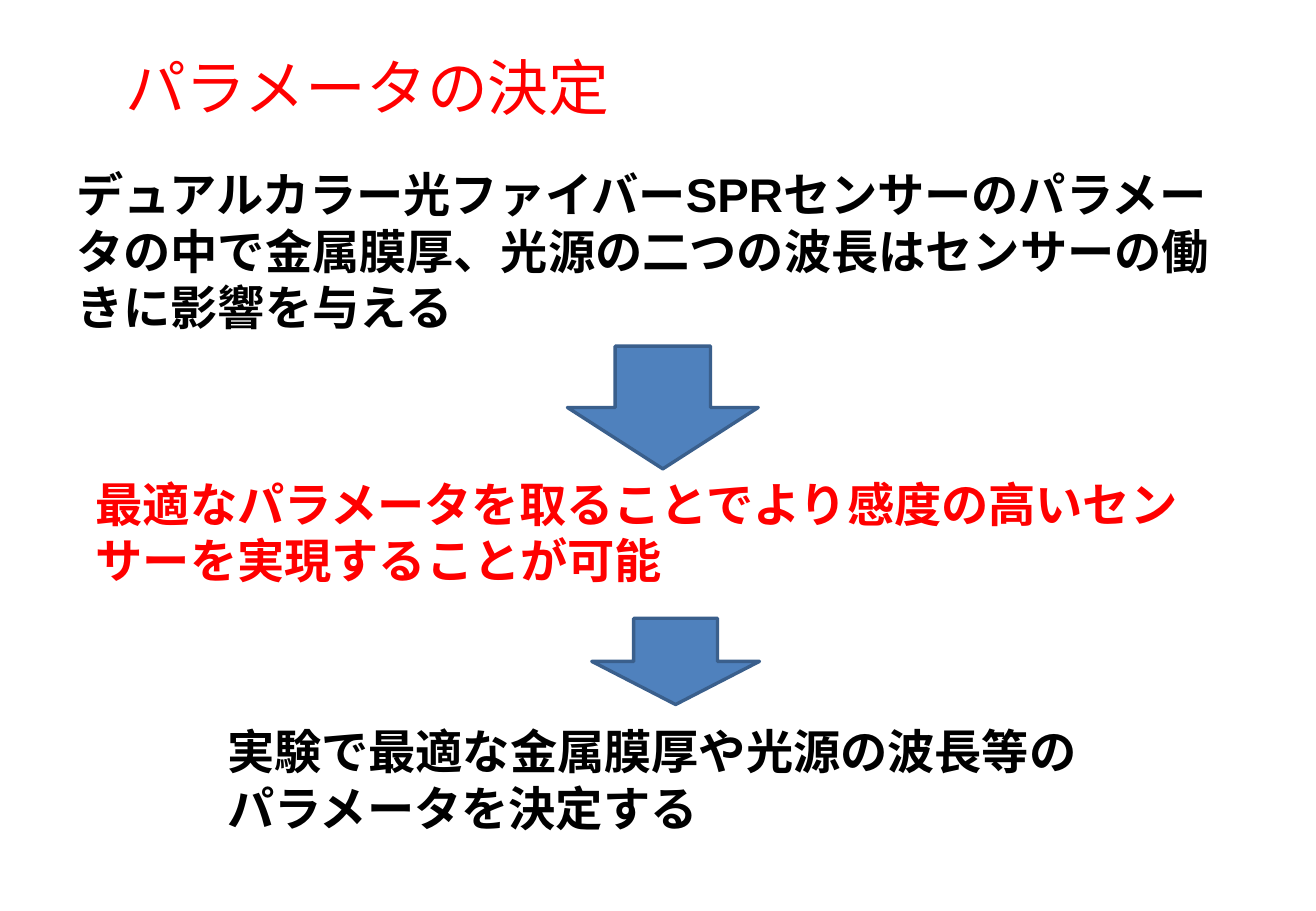
"""Build the slide on choosing the sensor parameters."""
from pptx import Presentation
from pptx.dml.color import RGBColor
from pptx.enum.shapes import MSO_SHAPE
from pptx.enum.text import MSO_ANCHOR, MSO_AUTO_SIZE, PP_ALIGN
from pptx.util import Inches, Pt

COLORS = {"red": "FF0000", "black": "000000", "arrow": "4F81BD", "outline": "3A5F8C"}


def write_text(shape, text, size=28, color="black", bold=True):
    """Fill a shape with one left-aligned paragraph."""
    frame = shape.text_frame
    frame.word_wrap = True
    frame.auto_size = MSO_AUTO_SIZE.NONE
    frame.vertical_anchor = MSO_ANCHOR.TOP
    paragraph = frame.paragraphs[0]
    paragraph.alignment = PP_ALIGN.LEFT
    run = paragraph.add_run()
    run.text = text
    run.font.name = "Arial"
    run.font.size = Pt(size)
    run.font.bold = bold
    run.font.color.rgb = RGBColor.from_string(COLORS[color])


presentation = Presentation()
presentation.slide_width = Inches(10.83)
presentation.slide_height = Inches(7.5)
slide = presentation.slides.add_slide(presentation.slide_layouts[5])

title = slide.shapes.title
title.left, title.top = Inches(0.93), Inches(0.36)
title.width, title.height = Inches(4.25), Inches(0.71)
write_text(title, "パラメータの決定", size=36, color="red", bold=False)

statements = [
    ((0.53, 1.31, 9.84, 1.51), "black",
     "デュアルカラー光ファイバーSPRセンサーのパラメータの中で金属膜厚、光源の二つの波長はセンサーの働きに影響を与える"),
    ((0.69, 3.86, 9.37, 1.04), "red",
     "最適なパラメータを取ることでより感度の高いセンサーを実現することが可能"),
    ((1.77, 5.9, 7.56, 1.04), "black",
     "実験で最適な金属膜厚や光源の波長等のパラメータを決定する"),
]
for box, color, text in statements:
    statement = slide.shapes.add_textbox(*map(Inches, box))
    write_text(statement, text, color=color)

for box in [(4.67, 2.85, 1.57, 1.01), (4.87, 5.09, 1.38, 0.71)]:
    arrow = slide.shapes.add_shape(MSO_SHAPE.DOWN_ARROW, *map(Inches, box))
    arrow.shadow.inherit = False
    arrow.fill.solid()
    arrow.fill.fore_color.rgb = RGBColor.from_string(COLORS["arrow"])
    arrow.line.color.rgb = RGBColor.from_string(COLORS["outline"])
    arrow.line.width = Pt(2)

presentation.save("out.pptx")
